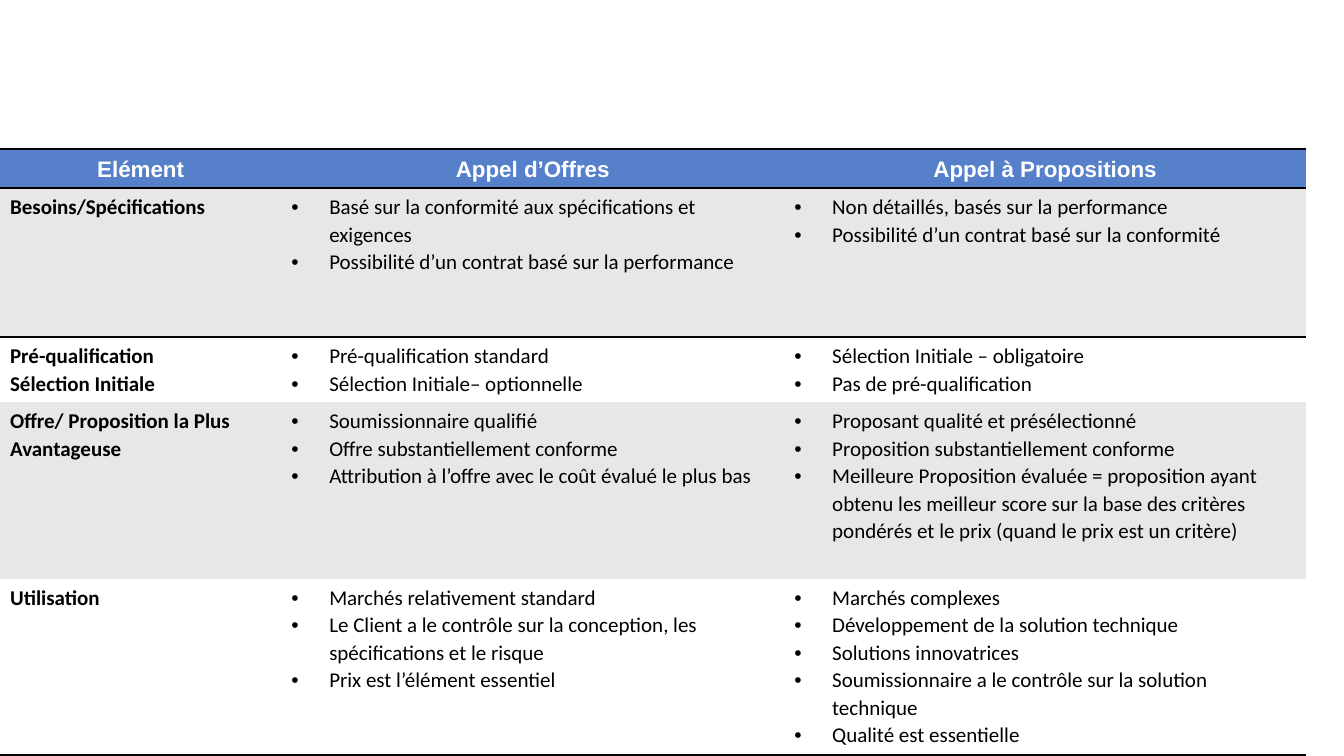
from dataclasses import dataclass

from lxml.etree import SubElement
from pptx import Presentation
from pptx.dml.color import RGBColor as RGB
from pptx.enum.text import MSO_ANCHOR as Anchor, PP_ALIGN as Align
from pptx.oxml.ns import qn
from pptx.util import Pt

PX = 9525
NO_GRID_STYLE = "{2D5ABB26-0587-4C30-8999-92F81FD0307C}"


@dataclass(frozen=True)
class Theme:
    header_fill: str = "5780CA"
    header_text: str = "FFFFFF"
    band: str = "E7E7E7"
    plain: str = "FFFFFF"
    text: str = "000000"
    rule: str = "000000"
    header_font: str = "Arial"
    body_font: str = "Calibri"
    header_size: float = 16
    body_size: float = 15
    rule_width: float = 2.25
    line_spacing: float = 1.07
    bullet_indent: int = 36


@dataclass(frozen=True)
class Criterion:
    height: int
    element: list[str]
    offers: list[str]
    proposals: list[str]


THEME = Theme()
LEFT, TOP, HEADER_HEIGHT = 0, 142, 37
COLUMN_WIDTHS = [268, 479, 497]
HEADERS = ["Elément", "Appel d’Offres", "Appel à Propositions"]
CRITERIA = [
    Criterion(
        142,
        ["Besoins/Spécifications"],
        ["Basé sur la conformité aux spécifications et exigences",
         "Possibilité d’un contrat basé sur la performance"],
        ["Non détaillés, basés sur la performance",
         "Possibilité d’un contrat basé sur la conformité"],
    ),
    Criterion(
        62,
        ["Pré-qualification", "Sélection Initiale"],
        ["Pré-qualification standard", "Sélection Initiale– optionnelle"],
        ["Sélection Initiale – obligatoire", "Pas de pré-qualification"],
    ),
    Criterion(
        168,
        ["Offre/ Proposition la Plus Avantageuse"],
        ["Soumissionnaire qualifié",
         "Offre substantiellement conforme",
         "Attribution à l’offre avec le coût évalué le plus bas"],
        ["Proposant qualité et présélectionné",
         "Proposition substantiellement conforme",
         "Meilleure Proposition évaluée = proposition ayant obtenu les meilleur "
         "score sur la base des critères pondérés et le prix (quand le prix est "
         "un critère)"],
    ),
    Criterion(
        168,
        ["Utilisation"],
        ["Marchés relativement standard",
         "Le Client a le contrôle sur la conception, les spécifications et le risque",
         "Prix est l’élément essentiel"],
        ["Marchés complexes",
         "Développement de la solution technique",
         "Solutions innovatrices",
         "Soumissionnaire a le contrôle sur la solution technique",
         "Qualité est essentielle"],
    ),
]


def add_bullet(p) -> None:
    pPr = p._p.get_or_add_pPr()
    indent = THEME.bullet_indent * PX
    pPr.set("marL", str(indent))
    pPr.set("indent", str(-indent))
    SubElement(pPr, qn("a:buFont"), typeface="Arial")
    SubElement(pPr, qn("a:buChar"), char="•")


def add_rules(cell, sides: str) -> None:
    tcPr = cell._tc.get_or_add_tcPr()
    for side in sides:
        ln = SubElement(tcPr, qn(f"a:ln{side}"), w=str(Pt(THEME.rule_width)))
        fill = SubElement(ln, qn("a:solidFill"))
        SubElement(fill, qn("a:srgbClr"), val=THEME.rule)


def fill_cell(cell, lines: list[str], fill: str, rules: str = "",
              header: bool = False, bulleted: bool = False) -> None:
    add_rules(cell, rules)
    cell.fill.solid()
    cell.fill.fore_color.rgb = RGB.from_string(fill)
    cell.vertical_anchor = Anchor.MIDDLE if header else Anchor.TOP
    tf = cell.text_frame
    for i, line in enumerate(lines):
        p = tf.add_paragraph() if i else tf.paragraphs[0]
        if bulleted:
            add_bullet(p)
        p.alignment = Align.CENTER if header else Align.LEFT
        p.line_spacing = THEME.line_spacing
        r = p.add_run()
        r.text = line
        r.font.name = THEME.header_font if header else THEME.body_font
        r.font.size = Pt(THEME.header_size if header else THEME.body_size)
        r.font.bold = not bulleted
        r.font.color.rgb = RGB.from_string(THEME.header_text if header else THEME.text)


def add_comparison(s) -> None:
    heights = [HEADER_HEIGHT, *(c.height for c in CRITERIA)]
    table = s.shapes.add_table(
        len(heights), len(COLUMN_WIDTHS), LEFT * PX, TOP * PX,
        sum(COLUMN_WIDTHS) * PX, sum(heights) * PX).table
    table._tbl.tblPr.find(qn("a:tableStyleId")).text = NO_GRID_STYLE
    table.horz_banding = False
    for column, width in zip(table.columns, COLUMN_WIDTHS):
        column.width = width * PX
    for row, height in zip(table.rows, heights):
        row.height = height * PX
    for col, header in enumerate(HEADERS):
        fill_cell(table.cell(0, col), [header], THEME.header_fill, "TB", header=True)
    for row, c in enumerate(CRITERIA, start=1):
        fill = THEME.band if row % 2 else THEME.plain
        rules = {1: "T", len(CRITERIA): "B"}.get(row, "")
        for col, lines in enumerate([c.element, c.offers, c.proposals]):
            fill_cell(table.cell(row, col), lines, fill, rules, bulleted=col > 0)


def main() -> None:
    prs = Presentation()
    prs.slide_width, prs.slide_height = 1280 * PX, 720 * PX
    s = prs.slides.add_slide(prs.slide_layouts[6])
    add_comparison(s)
    prs.save("out.pptx")


if __name__ == "__main__":
    main()
